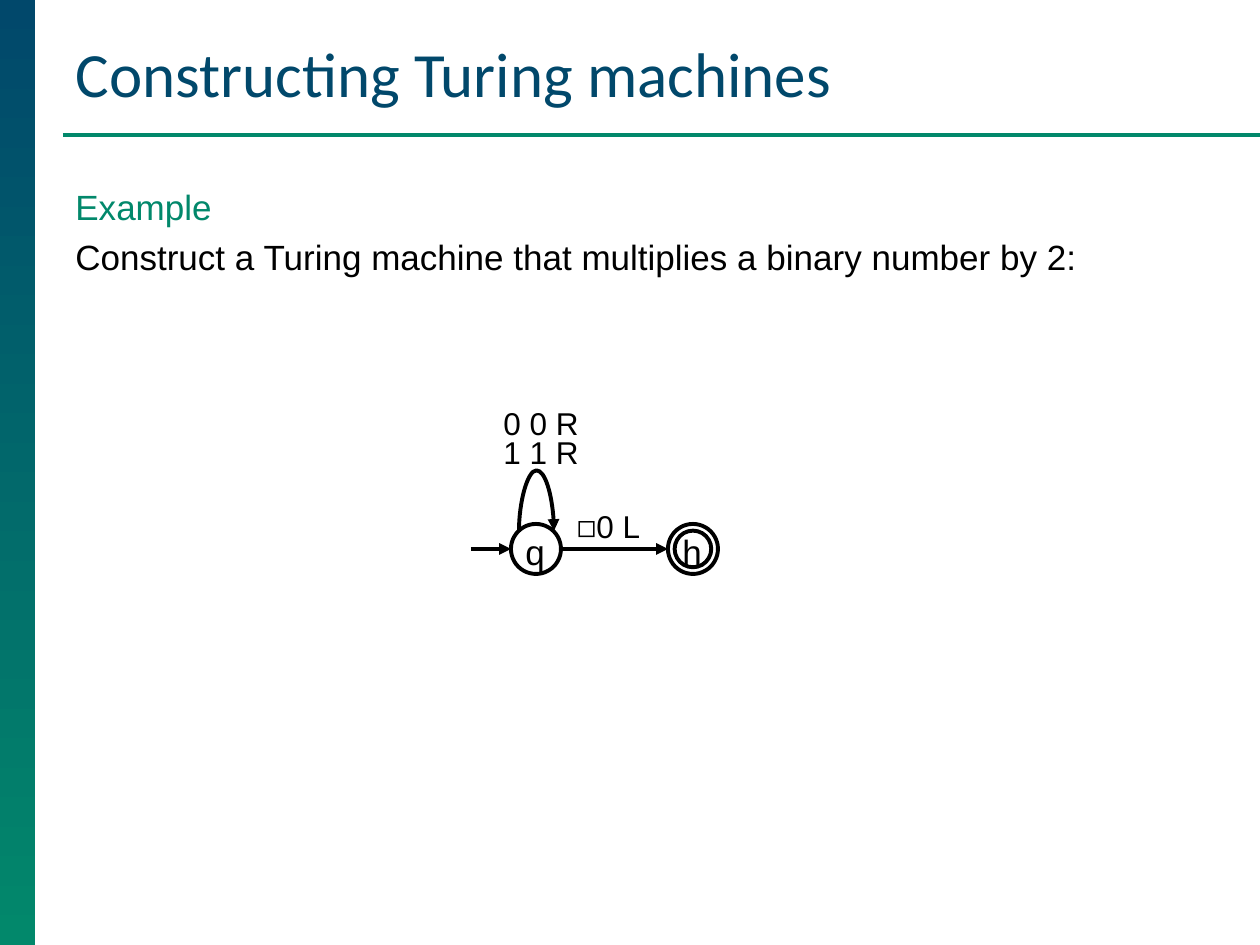
from lxml import etree
from pptx import Presentation
from pptx.dml.color import RGBColor
from pptx.enum.shapes import MSO_CONNECTOR, MSO_SHAPE
from pptx.enum.text import MSO_ANCHOR, PP_ALIGN
from pptx.oxml.ns import qn
from pptx.util import Pt

PX = 914400 // 126
NAVY = RGBColor(0x01, 0x48, 0x6B)
GREEN = RGBColor(0x02, 0x88, 0x6B)
BLACK = RGBColor(0, 0, 0)
STRAIGHT, CURVE = MSO_CONNECTOR.STRAIGHT, MSO_CONNECTOR.CURVE
OVAL, DONUT, RECTANGLE = MSO_SHAPE.OVAL, MSO_SHAPE.DONUT, MSO_SHAPE.RECTANGLE
LEFT, CENTER = PP_ALIGN.LEFT, PP_ALIGN.CENTER
BOTTOM = MSO_ANCHOR.BOTTOM

STATE_SIZE = 50
STATE_TOP = 524
AXIS_Y = STATE_TOP + STATE_SIZE // 2
Q_LEFT, H_LEFT = 511, 668


def px(*lengths):
    """Turn lengths in px into EMU."""
    return [length * PX for length in lengths]


def style_font(font, size, color, name="Arial"):
    """Set the typeface, size and colour of a font."""
    font.name = name
    font.size = Pt(size)
    font.color.rgb = color


def add_title(slide, text):
    """Place and format the title placeholder."""
    title = slide.shapes.title
    title.left, title.top, title.width, title.height = px(63, 26, 1169, 90)
    frame = title.text_frame
    frame.text = text
    frame.vertical_anchor = BOTTOM
    frame.paragraphs[0].alignment = LEFT
    style_font(frame.paragraphs[0].runs[0].font, 36, NAVY, "Calibri")


def add_text(slide, box, lines, size, alignment=LEFT, wrap=False):
    """Add a text box with one paragraph for each (text, colour) line."""
    frame = slide.shapes.add_textbox(*px(*box)).text_frame
    frame.word_wrap = wrap
    for index, (text, color) in enumerate(lines):
        paragraph = frame.add_paragraph() if index else frame.paragraphs[0]
        paragraph.text = text
        paragraph.alignment = alignment
        if index:
            paragraph.space_before = Pt(5)
        style_font(paragraph.runs[0].font, size, color)


def add_side_band(slide):
    """Add the gradient band along the left edge."""
    band = slide.shapes.add_shape(RECTANGLE, *px(0, 0, 35, 945))
    band.shadow.inherit = False
    band.line.fill.background()
    band.fill.gradient()
    band.fill.gradient_angle = 270
    for stop, color in zip(band.fill.gradient_stops, (NAVY, GREEN)):
        stop.color.rgb = color


def add_state(slide, kind, left, name):
    """Add a state outline and its name."""
    state = slide.shapes.add_shape(kind, *px(left, STATE_TOP, STATE_SIZE, STATE_SIZE))
    state.shadow.inherit = False
    state.fill.background()
    state.line.color.rgb = BLACK
    state.line.width = Pt(2.25)
    if kind == DONUT:
        state.adjustments[0] = 0.134
    add_text(slide, (left + 2, STATE_TOP, 45, 55), [(name, BLACK)], 20)


def add_line(slide, ends, color=BLACK, kind=STRAIGHT, arrow=True):
    """Add a connector, with an arrowhead at its end if wanted."""
    connector = slide.shapes.add_connector(kind, *px(*ends))
    connector.line.color.rgb = color
    connector.line.width = Pt(2.25)
    properties = connector.element.spPr
    if arrow:
        line = properties.find(qn("a:ln"))
        etree.SubElement(line, qn("a:tailEnd"), type="triangle")
    etree.SubElement(properties, qn("a:effectLst"))
    return connector


def add_loop(slide):
    """Add the arrow that leads from state q up and back to it."""
    properties = add_line(slide, (537, 549, 536, 514), kind=CURVE).element.spPr
    properties.find(qn("a:xfrm")).set("rot", "5400000")
    guides = properties.find(qn("a:prstGeom")).get_or_add_avLst()
    etree.SubElement(guides, qn("a:gd"), name="adj1", fmla="val 6200000")


def main():
    """Build the slide and save it."""
    presentation = Presentation()
    presentation.slide_width, presentation.slide_height = px(1260, 945)
    slide = presentation.slides.add_slide(presentation.slide_layouts[5])
    add_side_band(slide)
    add_line(slide, (63, 135, 1260, 135), GREEN, arrow=False)
    add_title(slide, "Constructing Turing machines")
    task = "Construct a Turing machine that multiplies a binary number by 2:"
    add_text(slide, (63, 179, 1124, 690), [("Example", GREEN), (task, BLACK)], 20, wrap=True)

    add_state(slide, OVAL, Q_LEFT, "q")
    add_state(slide, DONUT, H_LEFT, "h")
    add_line(slide, (471, AXIS_Y, Q_LEFT, AXIS_Y))
    add_line(slide, (Q_LEFT + STATE_SIZE, AXIS_Y, H_LEFT, AXIS_Y))
    add_loop(slide)
    add_text(slide, (560, 501, 97, 50), [("◻0 L", BLACK)], 18, CENTER)
    for top, label in ((398, "0 0 R"), (427, "1 1 R")):
        add_text(slide, (491, top, 102, 50), [(label, BLACK)], 18)
    presentation.save("out.pptx")


if __name__ == "__main__":
    main()
